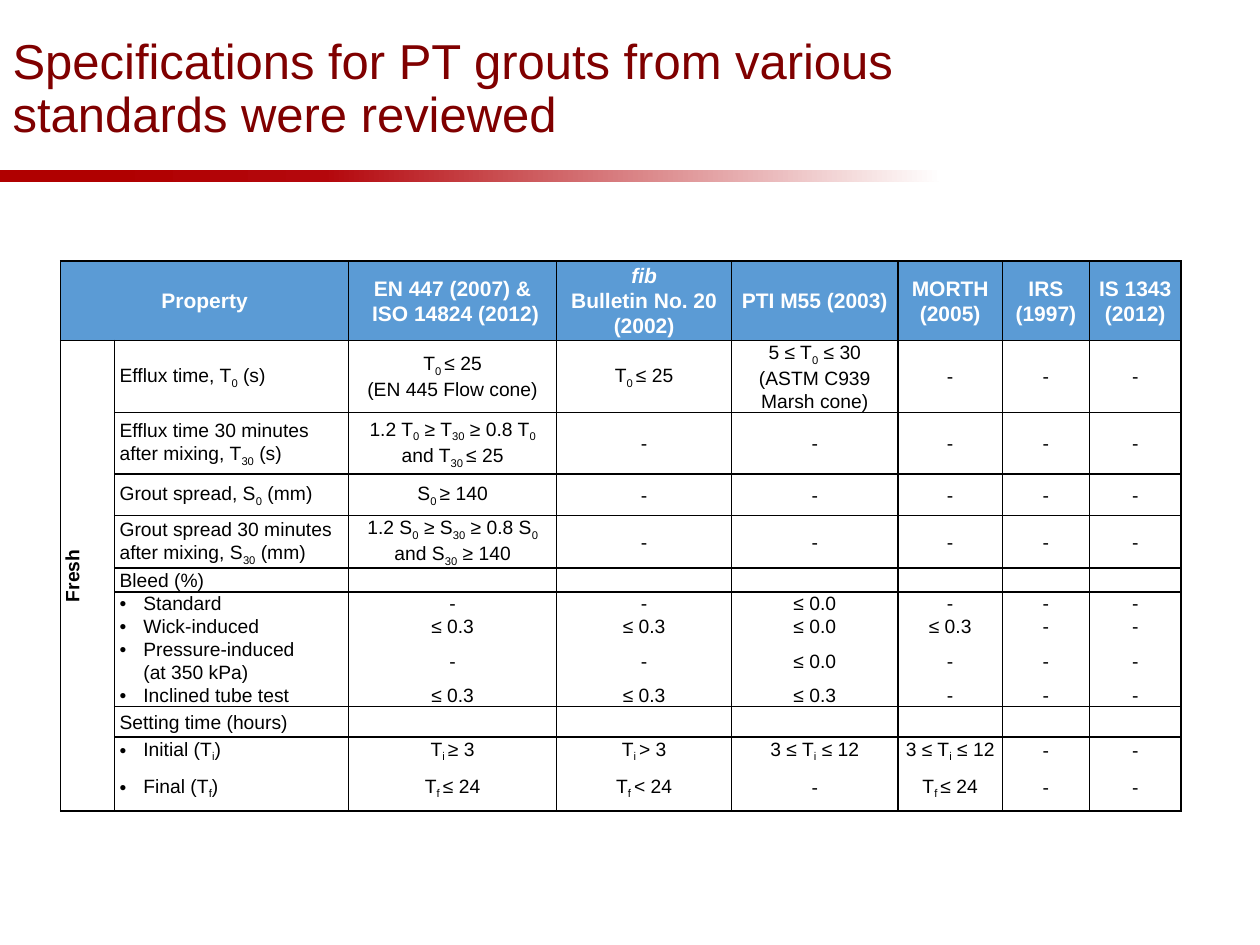
from lxml import etree
from pptx import Presentation
from pptx import util as u
from pptx.dml.color import RGBColor
from pptx.enum import shapes, text
from pptx.oxml.ns import qn

COLORS = {"title": "800000", "header": "5B9BD5", "white": "FFFFFF",
          "black": "000000", "red": "B00000", "bright": "B4070C"}
PLAIN_TABLE = "{2D5ABB26-0587-4C30-8999-92F81FD0307C}"
COL_WIDTHS = [1.09, 4.72, 4.19, 3.53, 3.35, 2.11, 1.75, 1.85]
ROW_HEIGHTS = [1.6, 1.4, 1.24, 0.84, 0.99, 0.43, 0.43, 0.43, 0.91, 0.46,
               0.61, 0.43, 0.97]
# Text between underscores is subscript; a line break starts a paragraph.
HEADER = ["Property", "", "EN 447 (2007) &\n ISO 14824 (2012)",
          "fib\nBulletin No. 20 (2002)", "PTI M55 (2003)", "MORTH (2005)",
          "IRS (1997)", "IS 1343 (2012)"]
# Rows of one group share a frame without lines between them.
GROUPS = [
    [["Efflux time, T_0_ (s)", "T_0 _≤ 25\n(EN 445 Flow cone)", "T_0 _≤ 25",
      "5 ≤ T_0_ ≤ 30\n(ASTM C939 Marsh cone)", "-", "-", "-"]],
    [["Efflux time 30 minutes\nafter mixing, T_30_ (s)",
      "1.2 T_0_ ≥ T_30_ ≥ 0.8 T_0_\nand T_30 _≤ 25", "-", "-", "-", "-", "-"]],
    [["Grout spread, S_0_ (mm)", "S_0 _≥ 140", "-", "-", "-", "-", "-"]],
    [["Grout spread 30 minutes\nafter mixing, S_30_ (mm)",
      "1.2 S_0_ ≥ S_30_ ≥ 0.8 S_0_ and S_30_ ≥ 140", "-", "-", "-", "-", "-"]],
    [["Bleed (%)"] + [""] * 6,
     ["•Standard", "-", "-", "≤ 0.0", "-", "-", "-"],
     ["•Wick-induced", "≤ 0.3", "≤ 0.3", "≤ 0.0", "≤ 0.3", "-", "-"],
     ["•Pressure-induced\n(at 350 kPa)", "-", "-", "≤ 0.0", "-", "-", "-"],
     ["•Inclined tube test", "≤ 0.3", "≤ 0.3", "≤ 0.3", "-", "-", "-"]],
    [["Setting time (hours)"] + [""] * 6,
     ["•Initial (T_i_)", "T_i _≥ 3", "T_i _> 3", "3 ≤ T_i_ ≤ 12",
      "3 ≤ T_i_ ≤ 12", "-", "-"],
     ["•Final (T_f_)", "T_f _≤ 24", "T_f _< 24", "-", "T_f _≤ 24", "-", "-"]],
]


def rgb(name):
    return RGBColor.from_string(COLORS[name])


def write_text(p, content, size=11, color="black", bold=False, align=None,
               spacing=1.07, indent=None, bullet=False):
    """Fill a paragraph; text between underscores becomes subscript."""
    p.alignment, p.line_spacing = align, spacing
    if indent:
        pPr = p._p.get_or_add_pPr()
        pPr.set("marL", str(u.Cm(indent)))
        pPr.set("indent", str(-u.Cm(indent) if bullet else 0))
        if bullet:
            etree.SubElement(pPr, qn("a:buFont")).set("typeface", "Arial")
            etree.SubElement(pPr, qn("a:buChar")).set("char", "•")
    for i, part in enumerate(content.split("_")):
        if not part:
            continue
        r = p.add_run()
        r.text = part
        r.font.name, r.font.size, r.font.bold = "Arial", u.Pt(size), bold
        r.font.italic = content == "fib"
        r.font.color.rgb = rgb(color)
        if i % 2:
            r.font._element.set("baseline", "-25000")
    if not content:
        etree.SubElement(p._p, qn("a:endParaRPr")).set("sz", str(size * 100))


class SlideBuilder:
    def __init__(self, slide):
        self.s = slide

    def title(self, content, left, top, width, height):
        sp = self.s.shapes.title
        sp.left, sp.top, sp.width, sp.height = map(u.Cm, (left, top, width, height))
        tf = sp.text_frame
        tf.word_wrap, tf.auto_size = True, text.MSO_AUTO_SIZE.NONE
        tf.vertical_anchor = text.MSO_ANCHOR.MIDDLE
        write_text(tf.paragraphs[0], content, size=28, color="title",
                   align=text.PP_ALIGN.LEFT, spacing=0.9)

    def fading_bar(self, left, top, width, height):
        sp = self.s.shapes.add_shape(shapes.MSO_SHAPE.RECTANGLE,
                                     *map(u.Cm, (left, top, width, height)))
        sp.shadow.inherit = False
        sp.line.fill.background()
        sp.fill.gradient()
        sp.fill.gradient_angle = 0
        stops = sp._element.spPr.find(qn("a:gradFill")).find(qn("a:gsLst"))
        for stop in list(stops):
            stops.remove(stop)
        for pos, color in [(0, "red"), (8, "red"), (26, "bright"),
                           (75, "white"), (100, "white")]:
            stop = etree.SubElement(stops, qn("a:gs"), pos=str(pos * 1000))
            etree.SubElement(stop, qn("a:srgbClr"), val=COLORS[color])

    def cell(self, cell, content, sides, fill=None, **fmt):
        cell.margin_left = cell.margin_right = u.Cm(0.1)
        cell.margin_top = cell.margin_bottom = 0
        cell.vertical_anchor = text.MSO_ANCHOR.MIDDLE
        tcPr = cell._tc.get_or_add_tcPr()
        for side in "LRTB":
            if side in sides:
                ln = etree.SubElement(tcPr, qn("a:ln" + side), w=str(u.Pt(1)))
                solid = etree.SubElement(ln, qn("a:solidFill"))
                etree.SubElement(solid, qn("a:srgbClr"), val=COLORS["black"])
        if fill:
            cell.fill.solid()
            cell.fill.fore_color.rgb = rgb(fill)
        else:
            cell.fill.background()
        tf = cell.text_frame
        indent = 0.48 if content.startswith("•") else None
        for i, line in enumerate(content.split("\n")):
            p = tf.add_paragraph() if i else tf.paragraphs[0]
            write_text(p, line.lstrip("•"), indent=indent,
                       bullet=line.startswith("•"), **fmt)

    def table(self, left, top):
        center = text.PP_ALIGN.CENTER
        frame = self.s.shapes.add_table(
            len(ROW_HEIGHTS), len(COL_WIDTHS), u.Cm(left), u.Cm(top),
            u.Cm(sum(COL_WIDTHS)), u.Cm(sum(ROW_HEIGHTS)))
        tbl = frame.table
        tbl.horz_banding = tbl.first_row = False
        tbl._tbl.tblPr.find(qn("a:tableStyleId")).text = PLAIN_TABLE
        for col, width in zip(tbl.columns, COL_WIDTHS):
            col.width = u.Cm(width)
        for row, height in zip(tbl.rows, ROW_HEIGHTS):
            row.height = u.Cm(height)
        for c, content in enumerate(HEADER):
            self.cell(tbl.cell(0, c), content, "LRTB", fill="header", size=12,
                      color="white", bold=True, align=center)
        tbl.cell(0, 0).merge(tbl.cell(0, 1))

        last = len(ROW_HEIGHTS) - 1
        r = 0
        for group in GROUPS:
            for i, values in enumerate(group):
                r += 1
                stage, sides = ("Fresh", "LRTB") if r == 1 else ("", "LR")
                self.cell(tbl.cell(r, 0), stage, sides + "B" * (r == last),
                          bold=True, align=center)
                sides = "LR" + "T" * (i == 0) + "B" * (i == len(group) - 1)
                for c, content in enumerate(values, 1):
                    self.cell(tbl.cell(r, c), content, sides,
                              align=center if c > 1 else None)
        tbl.cell(1, 0).merge(tbl.cell(last, 0))
        tbl.cell(1, 0)._tc.tcPr.set("vert", "vert270")


def main():
    prs = Presentation()
    prs.slide_width, prs.slide_height = u.Cm(25.4), u.Cm(19.05)
    b = SlideBuilder(prs.slides.add_slide(prs.slide_layouts[5]))
    b.fading_bar(0, 3.43, 25.37, 0.25)
    b.fading_bar(-0.08, 3.43, 25.43, 0.23)
    b.title("Specifications for PT grouts from various standards were reviewed",
            0, -0.03, 21.89, 3.68)
    b.table(1.22, 5.26)
    prs.save("out.pptx")


if __name__ == "__main__":
    main()
